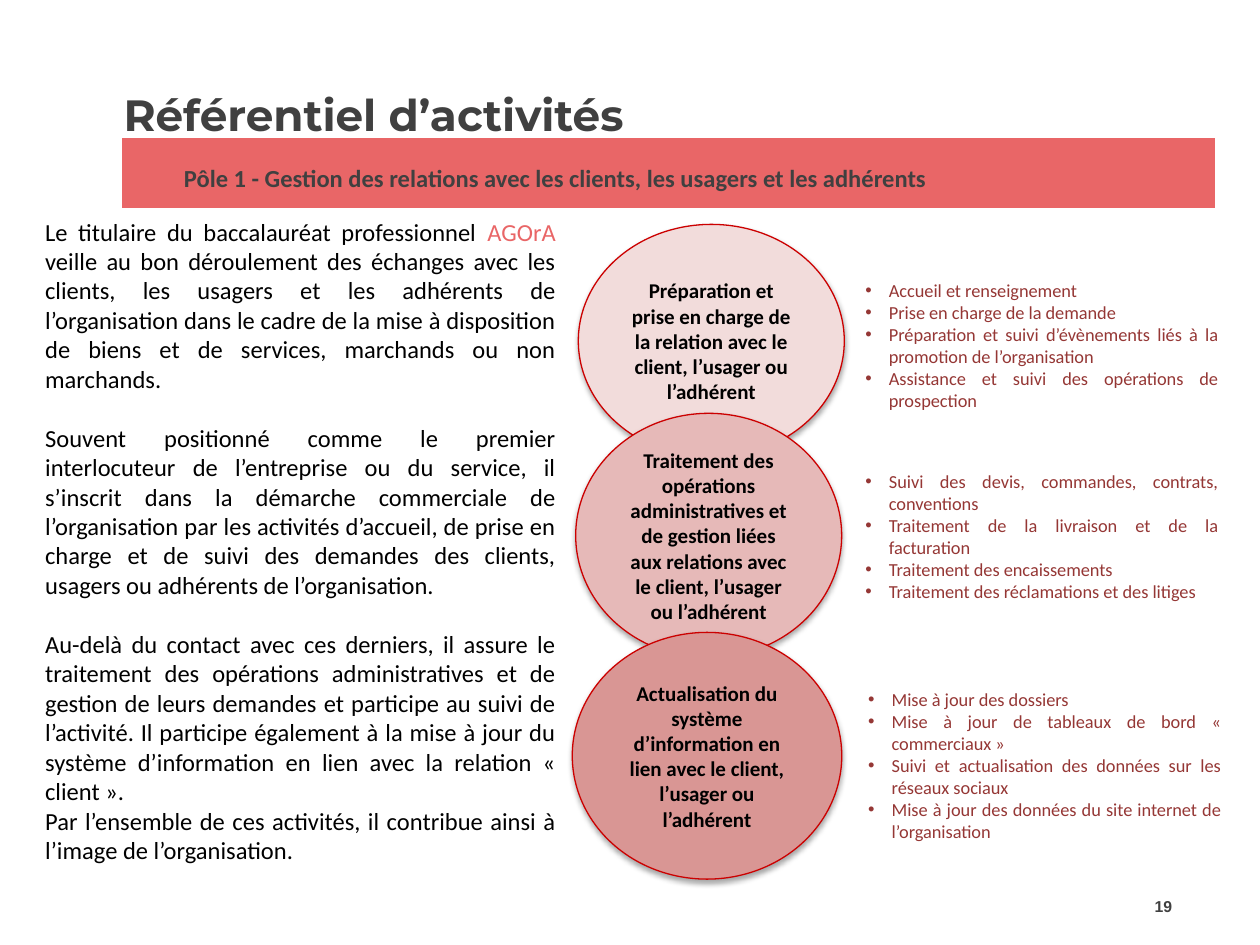
from lxml import etree
from pptx import Presentation
from pptx.dml.color import RGBColor
from pptx.enum.shapes import MSO_SHAPE
from pptx.enum.text import MSO_ANCHOR, PP_ALIGN
from pptx.oxml.ns import qn
from pptx.util import Pt

OVAL = MSO_SHAPE.OVAL
MIDDLE = MSO_ANCHOR.MIDDLE
LEFT, CENTER = PP_ALIGN.LEFT, PP_ALIGN.CENTER
RIGHT, JUSTIFY = PP_ALIGN.RIGHT, PP_ALIGN.JUSTIFY

BLACK = RGBColor(0x00, 0x00, 0x00)
WHITE = RGBColor(0xFF, 0xFF, 0xFF)
GREY = RGBColor(0x40, 0x40, 0x40)
CORAL = RGBColor(0xE9, 0x66, 0x67)
RED = RGBColor(0xCC, 0x00, 0x00)
WINE = RGBColor(0x95, 0x37, 0x35)
PALE = RGBColor(0xF2, 0xDC, 0xDB)
ROSE = RGBColor(0xE6, 0xB9, 0xB8)
DUSK = RGBColor(0xD9, 0x96, 0x94)

ACRONYM = "AGOrA "
# Each paragraph: space before, text
INTRO = [
    (0, "Le titulaire du baccalauréat professionnel AGOrA veille au bon "
        "déroulement des échanges avec les clients, les usagers et les adhérents "
        "de l’organisation dans le cadre de la mise à disposition de biens et de "
        "services, marchands ou non marchands."),
    (17, "Souvent positionné comme le premier interlocuteur de l’entreprise ou du "
         "service, il s’inscrit dans la démarche commerciale de l’organisation par "
         "les activités d’accueil, de prise en charge et de suivi des demandes des "
         "clients, usagers ou adhérents de l’organisation."),
    (17, "Au-delà du contact avec ces derniers, il assure le traitement des "
         "opérations administratives et de gestion de leurs demandes et participe "
         "au suivi de l’activité. Il participe également à la mise à jour du "
         "système d’information en lien avec la relation « client »."),
    (0, "Par l’ensemble de ces activités, il contribue ainsi à l’image de "
        "l’organisation."),
]

# Each stage: oval box, fill, heading, list box, tasks
STAGES = [
    ((330.5, 128.2, 152, 133.2), PALE,
     "Préparation et prise en charge de la relation avec le client, l’usager ou "
     "l’adhérent",
     (487.4, 156.2, 216, 83.5),
     ["Accueil et renseignement",
      "Prise en charge de la demande",
      "Préparation et suivi d’évènements liés à la promotion de l’organisation",
      "Assistance et suivi des opérations de prospection"]),
    ((329, 236.2, 152, 139.7), ROSE,
     "Traitement des opérations administratives et de gestion liées aux relations "
     "avec le client, l’usager ou l’adhérent",
     (487.4, 265, 216, 96.5),
     ["Suivi des devis, commandes, contrats, conventions",
      "Traitement de la livraison et de la facturation",
      "Traitement des encaissements",
      "Traitement des réclamations et des litiges"]),
    ((327, 361.4, 154, 141), DUSK,
     "Actualisation du système d’information en lien avec le client, l’usager ou "
     "l’adhérent",
     (489, 389.5, 216, 96.5),
     ["Mise à jour des dossiers",
      "Mise à jour de tableaux de bord « commerciaux »",
      "Suivi et actualisation des données sur les réseaux sociaux",
      "Mise à jour des données du site internet de l’organisation"]),
]


def style(font, size, color, bold=False, name="Calibri"):
    font.name, font.size, font.bold = name, Pt(size), bold
    font.color.rgb = color


def text_box(slide, box):
    frame = slide.shapes.add_textbox(*map(Pt, box)).text_frame
    frame.word_wrap = True
    return frame


def add_title(slide, box):
    title = slide.shapes.title
    title.left, title.top, title.width, title.height = map(Pt, box)
    frame = title.text_frame
    frame.text = "Référentiel d’activités"
    frame.vertical_anchor = MIDDLE
    para = frame.paragraphs[0]
    para.alignment = LEFT
    style(para.runs[0].font, 25, GREY, True, "Montserrat")


def add_band(slide, box):
    table = slide.shapes.add_table(1, 1, *map(Pt, box)).table
    table.first_row = table.horz_banding = False
    cell = table.cell(0, 0)
    cell.margin_left, cell.margin_top = Pt(36), Pt(16)
    cell.margin_right = cell.margin_bottom = 0
    cell.text_frame.text = ("Pôle 1 - Gestion des relations avec les clients, "
                            "les usagers et les adhérents")
    style(cell.text_frame.paragraphs[0].runs[0].font, 14, GREY, True)
    # White borders come before the fill in the cell properties
    props = cell._tc.get_or_add_tcPr()
    for side, width in (("L", 1), ("R", 1), ("T", 3), ("B", 3)):
        line = etree.SubElement(props, qn("a:ln" + side), w=str(Pt(width)))
        fill = etree.SubElement(line, qn("a:solidFill"))
        etree.SubElement(fill, qn("a:srgbClr"), val=str(WHITE))
    cell.fill.solid()
    cell.fill.fore_color.rgb = CORAL


def add_intro(slide, box):
    frame = text_box(slide, box)
    for i, (gap, text) in enumerate(INTRO):
        para = frame.add_paragraph() if i else frame.paragraphs[0]
        para.alignment = JUSTIFY
        para.space_before = Pt(gap)
        # Split off the acronym so that it takes the accent colour
        for part in text.partition(ACRONYM):
            if part:
                run = para.add_run()
                run.text = part
                style(run.font, 14, CORAL if part == ACRONYM else BLACK)


def add_oval(slide, box, color, text):
    oval = slide.shapes.add_shape(OVAL, *map(Pt, box))
    oval.fill.solid()
    oval.fill.fore_color.rgb = color
    oval.line.color.rgb = RED
    oval.line.width = Pt(0.75)
    # Soft shadow straight below
    oval.shadow.inherit = False
    effects = oval._element.spPr.find(qn("a:effectLst"))
    shade = etree.SubElement(effects, qn("a:outerShdw"), blurRad=str(Pt(3.1)),
                             dist=str(Pt(1.8)), dir="5400000", rotWithShape="0")
    tint = etree.SubElement(shade, qn("a:srgbClr"), val=str(BLACK))
    etree.SubElement(tint, qn("a:alpha"), val="35000")
    frame = oval.text_frame
    frame.word_wrap = True
    frame.vertical_anchor = MIDDLE
    frame.text = text
    para = frame.paragraphs[0]
    para.alignment = CENTER
    style(para.runs[0].font, 12, BLACK, True)


def add_tasks(slide, box, tasks):
    frame = text_box(slide, box)
    frame.text = "\n".join(tasks)
    for para in frame.paragraphs:
        para.alignment = JUSTIFY
        props = para._p.get_or_add_pPr()
        props.set("marL", str(Pt(13.5)))
        props.set("indent", str(-Pt(13.5)))
        etree.SubElement(props, qn("a:buFont"), typeface="Arial")
        etree.SubElement(props, qn("a:buChar"), char="•")
        style(para.runs[0].font, 10.5, WINE)


def add_number(slide, box):
    frame = text_box(slide, box)
    frame.text = "19"
    frame.vertical_anchor = MIDDLE
    para = frame.paragraphs[0]
    para.alignment = RIGHT
    style(para.runs[0].font, 9, GREY, True, "Arial")


def main():
    deck = Presentation()
    deck.slide_width, deck.slide_height = Pt(720), Pt(540)
    slide = deck.slides.add_slide(deck.slide_layouts[5])
    add_title(slide, (63.4, 14.4, 620.6, 101.5))
    add_number(slide, (641.5, 503.3, 35.3, 28.8))
    add_band(slide, (69.1, 77.8, 625.7, 42.5))
    add_intro(slide, (18.7, 120.2, 306, 380.2))
    for spot, color, head, area, tasks in STAGES:
        add_oval(slide, spot, color, head)
        add_tasks(slide, area, tasks)
    deck.save("out.pptx")


if __name__ == "__main__":
    main()
